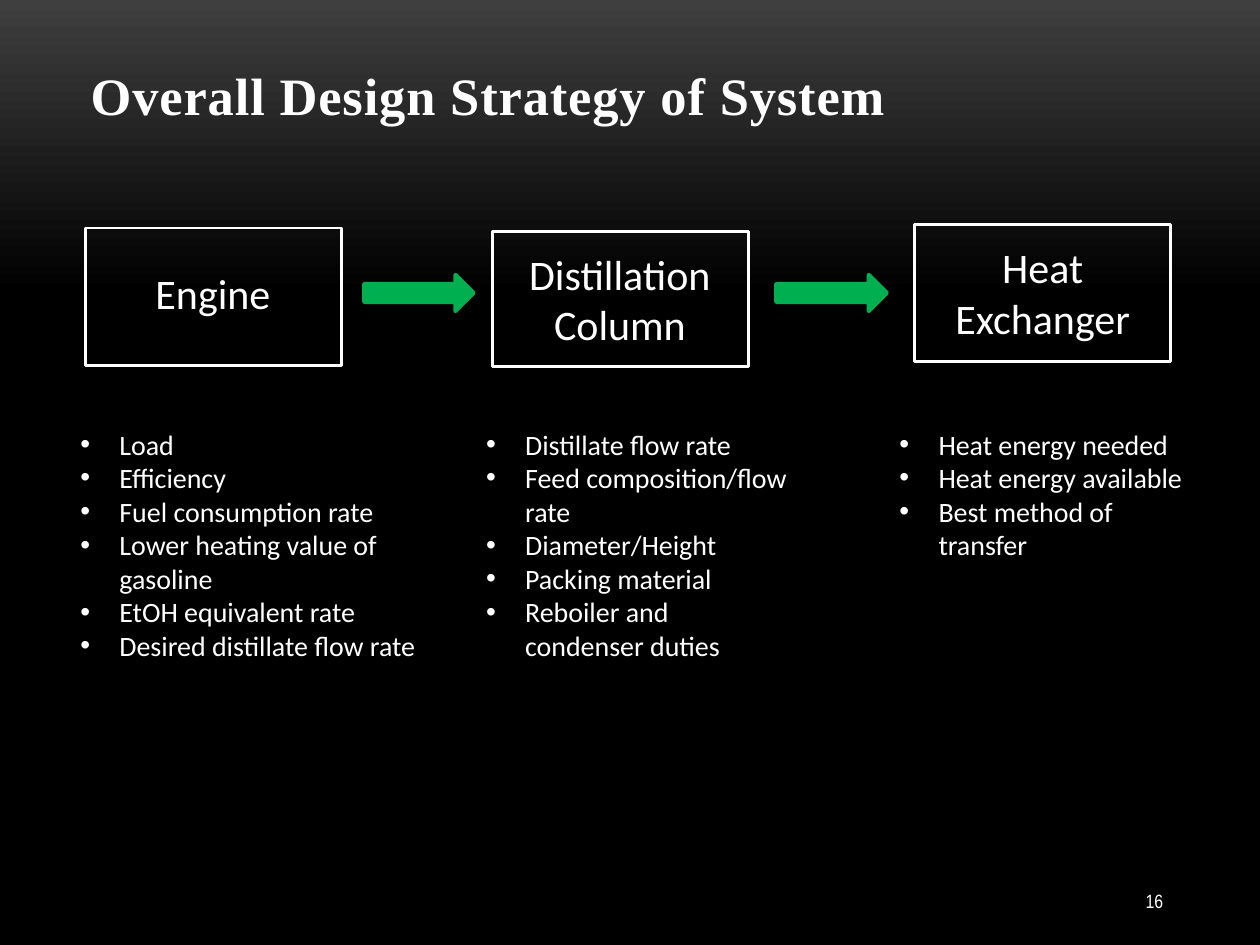
from lxml import etree
from pptx import Presentation
from pptx.dml.color import RGBColor
from pptx.enum.shapes import MSO_SHAPE
from pptx.enum.text import MSO_ANCHOR, MSO_AUTO_SIZE, PP_ALIGN
from pptx.oxml.ns import qn
from pptx.util import Inches, Pt

RECTANGLE, RIGHT_ARROW = MSO_SHAPE.RECTANGLE, MSO_SHAPE.RIGHT_ARROW
LEFT, CENTER, RIGHT = PP_ALIGN.LEFT, PP_ALIGN.CENTER, PP_ALIGN.RIGHT
TOP, MIDDLE, BOTTOM = MSO_ANCHOR.TOP, MSO_ANCHOR.MIDDLE, MSO_ANCHOR.BOTTOM

WHITE, GREEN, GRAY, BLACK = "FFFFFF", "00B050", "3F3F3F", "000000"
WIDTH, HEIGHT = 10, 7.5
BOX_WIDTH = 2.03
LIST_TOP = 3.34
ARROW_TOP, ARROW_HEIGHT = 2.18, 0.29
INDENT = 0.31

TITLE = "Overall Design Strategy of System"
PAGE_NUMBER = "16"
# box: left, top, height; label: left, top, width, height; list: left, width, height
STAGES = [
    {"name": "Engine", "box": (0.68, 1.81, 1.09),
     "label": (1.07, 2.07, 1.24, 0.51), "list": (0.54, 2.9, 1.99),
     "items": ["Load", "Efficiency", "Fuel consumption rate",
               "Lower heating value of gasoline", "EtOH equivalent rate",
               "Desired distillate flow rate"]},
    {"name": "Distillation Column", "box": (3.91, 1.84, 1.07),
     "label": (3.76, 1.92, 2.32, 0.91), "list": (3.76, 2.61, 1.99),
     "items": ["Distillate flow rate", "Feed composition/flow rate",
               "Diameter/Height", "Packing material",
               "Reboiler and condenser duties"]},
    {"name": "Heat Exchanger", "box": (7.26, 1.78, 1.09),
     "label": (7.3, 1.87, 1.95, 0.91), "list": (7.04, 2.59, 1.18),
     "items": ["Heat energy needed", "Heat energy available",
               "Best method of transfer"]},
]
ARROWS = [(2.89, 0.87), (6.16, 0.88)]  # left, width


def color(value):
    return RGBColor.from_string(value)


def inches(*lengths):
    return [Inches(length) for length in lengths]


def add_bullet(para):
    properties = para._p.get_or_add_pPr()
    properties.set("marL", str(Inches(INDENT)))
    properties.set("indent", str(-Inches(INDENT)))
    etree.SubElement(properties, qn("a:buFont")).set("typeface", "Arial")
    etree.SubElement(properties, qn("a:buChar")).set("char", "•")


def write(box, lines, size, font, align=LEFT, anchor=TOP, bullets=False, bold=False):
    frame = box.text_frame
    frame.word_wrap = True
    frame.auto_size = MSO_AUTO_SIZE.NONE
    frame.vertical_anchor = anchor
    frame.text = "\n".join(lines)
    for para in frame.paragraphs:
        if bullets:
            add_bullet(para)
        para.alignment = align
        para.font.size = Pt(size)
        para.font.name = font
        para.font.bold = bold
        para.font.color.rgb = color(WHITE)


def add_outline(page, kind, place, line, weight, fill=None):
    shape = page.shapes.add_shape(kind, *inches(*place))
    shape.shadow.inherit = False
    if fill:
        shape.fill.solid()
        shape.fill.fore_color.rgb = color(fill)
    else:
        shape.fill.background()
    shape.line.color.rgb = color(line)
    shape.line.width = Pt(weight)


def paint_background(page):
    fill = page.background.fill
    fill.gradient()
    fill.gradient_angle = 270
    for stop, (position, value) in zip(fill.gradient_stops, [(0, GRAY), (0.31, BLACK)]):
        stop.position = position
        stop.color.rgb = color(value)


def main():
    deck = Presentation()
    deck.slide_width, deck.slide_height = inches(WIDTH, HEIGHT)
    page = deck.slides.add_slide(deck.slide_layouts.get_by_name("Title Only"))
    paint_background(page)

    title = page.shapes.title
    title.left, title.top, title.width, title.height = inches(0.62, 0.33, 8.67, 0.72)
    write(title, [TITLE], 30, "Times New Roman", anchor=BOTTOM, bold=True)
    title.text_frame.paragraphs[0].runs[0].font._element.set("spc", "50")

    for stage in STAGES:
        left, width, height = stage["list"]
        box = page.shapes.add_textbox(*inches(left, LIST_TOP, width, height))
        write(box, stage["items"], 16, "Calibri", bullets=True)
        label = page.shapes.add_textbox(*inches(*stage["label"]))
        write(label, [stage["name"]], 24, "Calibri", align=CENTER)
        left, top, height = stage["box"]
        add_outline(page, RECTANGLE, (left, top, BOX_WIDTH, height), WHITE, 1.5)

    for left, width in ARROWS:
        place = (left, ARROW_TOP, width, ARROW_HEIGHT)
        add_outline(page, RIGHT_ARROW, place, GREEN, 2.25, fill=GREEN)

    number = page.shapes.add_textbox(*inches(8.25, 6.95, 1.08, 0.4))
    write(number, [PAGE_NUMBER], 11, "Arial Narrow", align=RIGHT, anchor=MIDDLE)
    deck.save("out.pptx")


if __name__ == "__main__":
    main()
